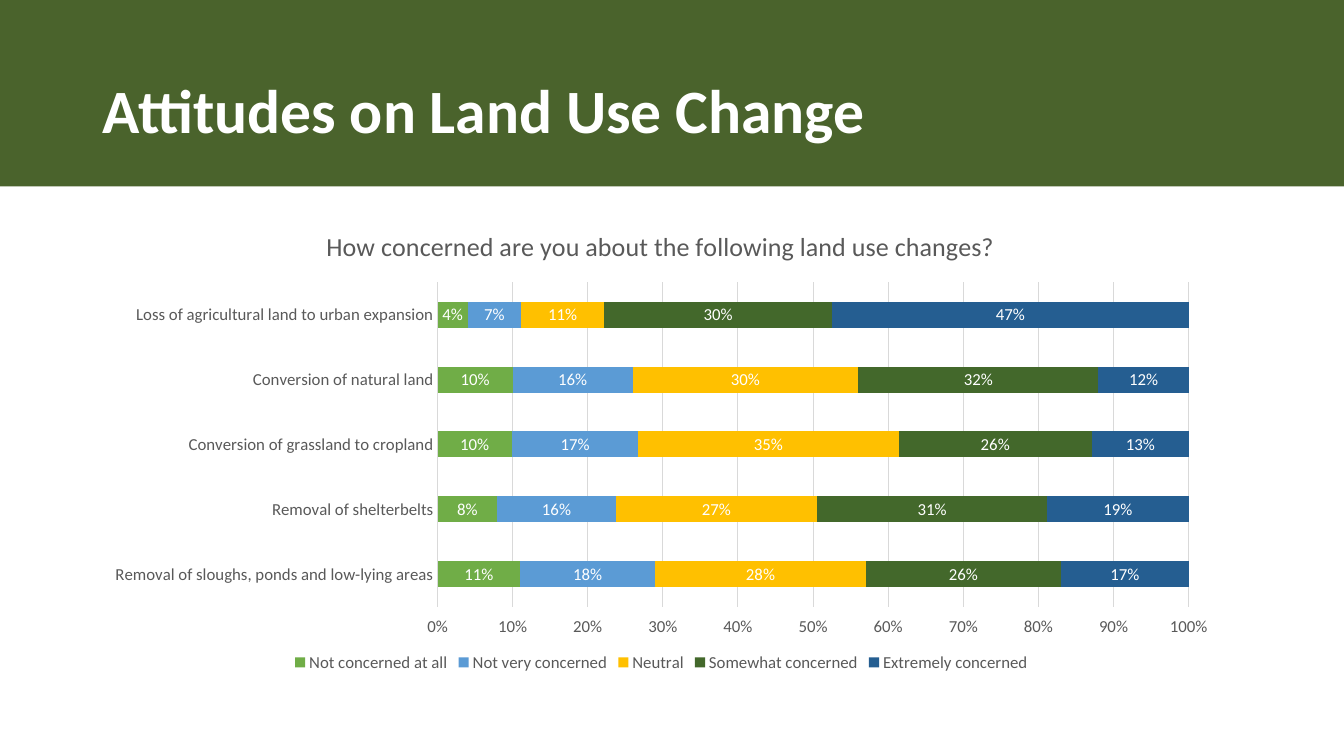
from lxml import etree
from pptx import Presentation
from pptx.chart.data import CategoryChartData
from pptx.dml.color import RGBColor
from pptx.enum.chart import (XL_CHART_TYPE, XL_LABEL_POSITION, XL_LEGEND_POSITION,
                             XL_TICK_LABEL_POSITION, XL_TICK_MARK)
from pptx.enum.shapes import MSO_SHAPE
from pptx.enum.text import MSO_ANCHOR
from pptx.oxml.ns import qn
from pptx.util import Inches, Pt

STACKED_BAR = XL_CHART_TYPE.BAR_STACKED_100
NO_TICK = XL_TICK_MARK.NONE
RECTANGLE = MSO_SHAPE.RECTANGLE
MIDDLE = MSO_ANCHOR.MIDDLE
CENTER_LABEL = XL_LABEL_POSITION.CENTER
BOTTOM_LEGEND = XL_LEGEND_POSITION.BOTTOM
HIGH_LABELS = XL_TICK_LABEL_POSITION.HIGH

FONT = "Calibri"
WHITE = "FFFFFF"
GREY_TEXT = "595959"
GREY_LINE = "D9D9D9"
CHART_WIDTH = 11.28
CHART_HEIGHT = 4.62


def color(value):
    return RGBColor.from_string(value)


def style_font(font, size, value, bold=False):
    font.name = FONT
    font.size = Pt(size)
    font.bold = bold
    font.color.rgb = color(value)


presentation = Presentation()
presentation.slide_width = Inches(13.33)
presentation.slide_height = Inches(7.5)
slide = presentation.slides.add_slide(presentation.slide_layouts[6])

banner = slide.shapes.add_shape(RECTANGLE, 0, 0, Inches(13.33), Inches(1.85))
banner.shadow.inherit = False
banner.fill.solid()
banner.fill.fore_color.rgb = color("4A632C")
banner.line.fill.background()

heading = slide.shapes.add_textbox(Inches(0.92), Inches(0.4), Inches(11.5), Inches(1.45))
heading.text_frame.word_wrap = True
heading.text_frame.vertical_anchor = MIDDLE
paragraph = heading.text_frame.paragraphs[0]
paragraph.line_spacing = 0.9
run = paragraph.add_run()
run.text = "Attitudes on Land Use Change"
style_font(run.font, 44, WHITE, bold=True)

responses = [
    ("Not concerned at all", "70AD47", (0.04, 0.10, 0.10, 0.08, 0.11)),
    ("Not very concerned", "5B9BD5", (0.07, 0.16, 0.17, 0.16, 0.18)),
    ("Neutral", "FFC000", (0.11, 0.30, 0.35, 0.27, 0.28)),
    ("Somewhat concerned", "43682B", (0.30, 0.32, 0.26, 0.31, 0.26)),
    ("Extremely concerned", "255E91", (0.47, 0.12, 0.13, 0.19, 0.17)),
]
chart_data = CategoryChartData(number_format="0%")
chart_data.categories = [
    "Loss of agricultural land to urban expansion",
    "Conversion of natural land",
    "Conversion of grassland to cropland",
    "Removal of shelterbelts",
    "Removal of sloughs, ponds and low-lying areas",
]
for name, fill, shares in responses:
    chart_data.add_series(name, shares)

chart = slide.shapes.add_chart(STACKED_BAR, Inches(0.92), Inches(2.09), Inches(CHART_WIDTH),
                               Inches(CHART_HEIGHT), chart_data).chart
style_font(chart.font, 12, GREY_TEXT)

chart.has_title = True
chart.chart_title.include_in_layout = False
run = chart.chart_title.text_frame.paragraphs[0].add_run()
run.text = "How concerned are you about the following land use changes?"
style_font(run.font, 18.6, GREY_TEXT)

chart.has_legend = True
chart.legend.position = BOTTOM_LEGEND
chart.legend.include_in_layout = False
style_font(chart.legend.font, 12, GREY_TEXT)

category_axis = chart.category_axis
category_axis.reverse_order = True
category_axis.format.line.color.rgb = color(GREY_LINE)
category_axis.format.line.width = Pt(0.75)

value_axis = chart.value_axis
value_axis.minimum_scale = 0
value_axis.maximum_scale = 1
value_axis.major_unit = 0.1
value_axis.tick_label_position = HIGH_LABELS
value_axis.tick_labels.number_format = "0%"
value_axis.tick_labels.number_format_is_linked = False
value_axis.format.line.fill.background()
value_axis.major_gridlines.format.line.color.rgb = color(GREY_LINE)
value_axis.major_gridlines.format.line.width = Pt(0.75)

for axis in (category_axis, value_axis):
    axis.major_tick_mark = NO_TICK
    axis.minor_tick_mark = NO_TICK
    style_font(axis.tick_labels.font, 12, GREY_TEXT)

plot = chart.plots[0]
plot.gap_width = 150
plot.overlap = 100
plot.vary_by_categories = False
for series, (name, fill, shares) in zip(plot.series, responses):
    series.format.fill.solid()
    series.format.fill.fore_color.rgb = color(fill)
    labels = series.data_labels
    labels.show_value = True
    labels.position = CENTER_LABEL
    labels.number_format = "0%"
    labels.number_format_is_linked = False
    style_font(labels.font, 12, WHITE)

chart_element = plot._element.getparent().getparent()
edges = {"xMode": "edge", "yMode": "edge"}
layouts = [
    ("c:title", 1, {**edges, "x": 2.27 / CHART_WIDTH, "y": 0.13 / CHART_HEIGHT}),
    ("c:plotArea", 0, {"layoutTarget": "inner", **edges,
                       "x": 3.42 / CHART_WIDTH, "y": 0.71 / CHART_HEIGHT,
                       "w": 7.45 / CHART_WIDTH, "h": 3.22 / CHART_HEIGHT}),
]
for part, position, settings in layouts:
    parent = chart_element.find(qn(part))
    layout = parent.find(qn("c:layout"))
    if layout is None:
        layout = etree.Element(qn("c:layout"))
        parent.insert(position, layout)
    manual = etree.SubElement(layout, qn("c:manualLayout"))
    for key, value in settings.items():
        etree.SubElement(manual, qn("c:" + key)).set("val", str(value))

presentation.save("out.pptx")
